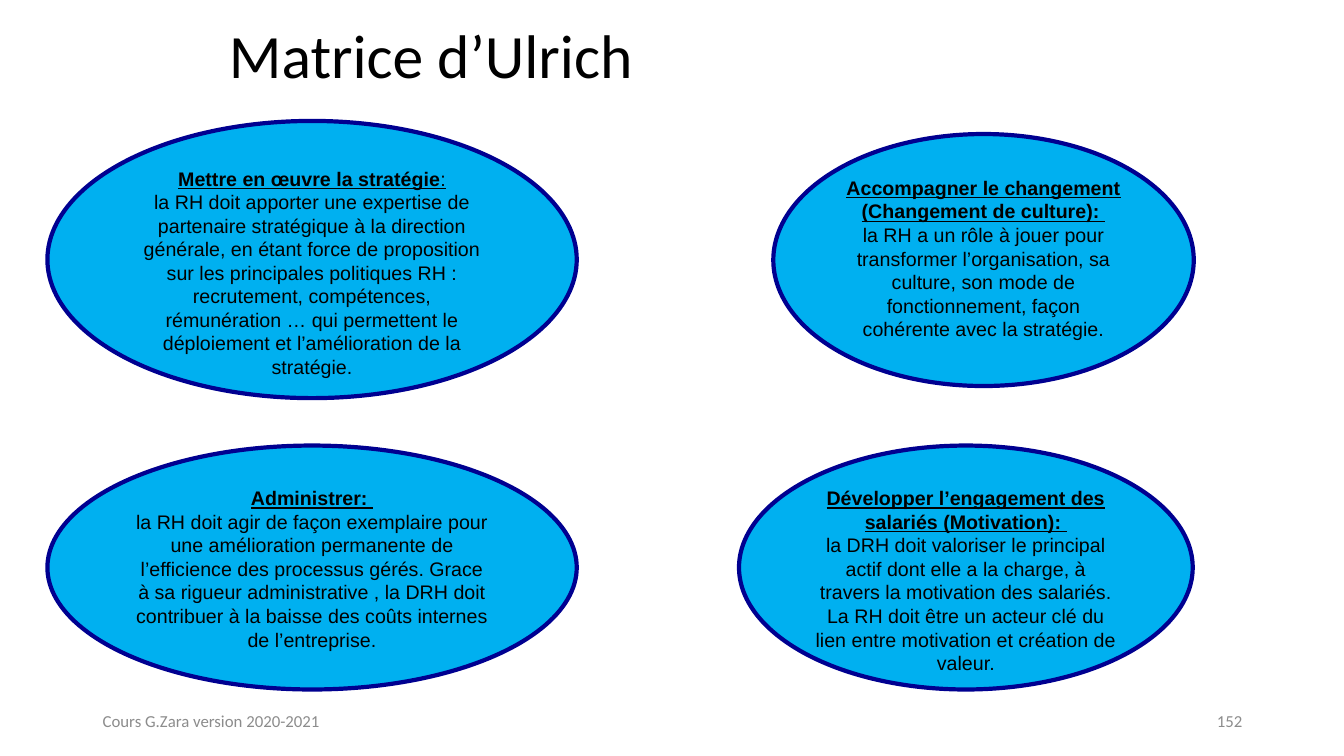
from pptx import Presentation
from pptx.dml.color import RGBColor
from pptx.enum.shapes import MSO_SHAPE
from pptx.enum.text import MSO_ANCHOR, PP_ALIGN
from pptx.util import Inches, Pt

COLOURS = {"text": "000000", "role": "00B0F0", "outline": "000090", "footer": "8C8C8C"}
HEADING = {"bold": True, "underline": True}
BODY = {"bold": False, "underline": False}
COLON = {"bold": False, "underline": True}

ROLES = [
    ((0.47, 4.42, 5.25, 2.42), [("Administrer: ", HEADING)],
     "la RH doit agir de façon exemplaire pour une amélioration permanente de "
     "l’efficience des processus gérés. Grace à sa rigueur administrative , la DRH "
     "doit contribuer à la baisse des coûts internes de l’entreprise."),
    ((7.67, 1.33, 4.17, 2.5),
     [("Accompagner le changement (Changement de culture): ", HEADING)],
     "la RH a un rôle à jouer pour transformer l’organisation, sa culture, son mode "
     "de fonctionnement, façon cohérente avec la stratégie."),
    ((7.33, 4.42, 4.5, 2.42),
     [("Développer l’engagement des salariés (Motivation): ", HEADING)],
     "la DRH doit valoriser le principal actif dont elle a la charge, à travers la "
     "motivation des salariés. La RH doit être un acteur clé du lien entre motivation "
     "et création de valeur."),
    ((0.47, 1.2, 5.25, 2.75),
     [("Mettre en œuvre la stratégie", HEADING), (":", COLON)],
     "la RH doit apporter une expertise de partenaire stratégique à la direction "
     "générale, en étant force de proposition sur les principales politiques RH : "
     "recrutement, compétences, rémunération … qui permettent le déploiement et "
     "l’amélioration de la stratégie."),
]


def colour(name):
    """Return the palette colour of that name."""
    return RGBColor.from_string(COLOURS[name])


def assign(target, settings):
    """Set each attribute of the target from a dict."""
    for attribute, value in settings.items():
        setattr(target, attribute, value)


class MatrixSlide:
    """Hold the text styles and the slide being drawn."""

    styles = {
        "title": ({"name": "Calibri", "size": Pt(44)}, "text"),
        "role": ({"name": "Arial", "size": Pt(14)}, "text"),
        "footer": ({"name": "Calibri", "size": Pt(12)}, "footer"),
    }

    def __init__(self, deck):
        """Add a title-only slide to the deck."""
        self.slide = deck.slides.add_slide(deck.slide_layouts[5])

    def add_wording(self, paragraph, runs, style, align):
        """Fill a paragraph with formatted runs."""
        paragraph.alignment = align
        font_format, ink = self.styles[style]
        for wording, emphasis in runs:
            run = paragraph.add_run()
            run.text = wording
            assign(run.font, {**font_format, **emphasis})
            run.font.color.rgb = colour(ink)

    def title(self, wording, box):
        """Place and format the title."""
        heading = self.slide.shapes.title
        assign(heading, dict(zip(("left", "top", "width", "height"), map(Inches, box))))
        heading.text_frame.vertical_anchor = MSO_ANCHOR.MIDDLE
        paragraph = heading.text_frame.paragraphs[0]
        paragraph.line_spacing = 0.9
        self.add_wording(paragraph, [(wording, {})], "title", PP_ALIGN.LEFT)

    def role(self, box, heading, description):
        """Draw one role of the matrix as an ellipse."""
        ellipse = self.slide.shapes.add_shape(MSO_SHAPE.OVAL, *map(Inches, box))
        ellipse.shadow.inherit = False
        ellipse.fill.solid()
        ellipse.fill.fore_color.rgb = colour("role")
        ellipse.line.color.rgb = colour("outline")
        ellipse.line.width = Pt(3)
        frame = ellipse.text_frame
        assign(frame, {"word_wrap": True, "vertical_anchor": MSO_ANCHOR.TOP})
        self.add_wording(frame.paragraphs[0], heading, "role", PP_ALIGN.CENTER)
        self.add_wording(frame.add_paragraph(), [(description, BODY)], "role", PP_ALIGN.CENTER)

    def footer(self, wording, left, align):
        """Add a note on the footer line."""
        note = self.slide.shapes.add_textbox(*map(Inches, (left, 6.95, 3, 0.4)))
        frame = note.text_frame
        assign(frame, {"word_wrap": True, "vertical_anchor": MSO_ANCHOR.MIDDLE})
        self.add_wording(frame.paragraphs[0], [(wording, {})], "footer", align)


def main():
    """Build and save the slide."""
    deck = Presentation()
    assign(deck, {"slide_width": Inches(13.33), "slide_height": Inches(7.5)})
    matrix = MatrixSlide(deck)
    matrix.title("Matrice d’Ulrich", (2.17, 0.08, 9, 1))
    for box, heading, description in ROLES:
        matrix.role(box, heading, description)
    matrix.footer("Cours G.Zara version 2020-2021", 0.92, PP_ALIGN.LEFT)
    matrix.footer("152", 9.42, PP_ALIGN.RIGHT)
    deck.save("out.pptx")


if __name__ == "__main__":
    main()
